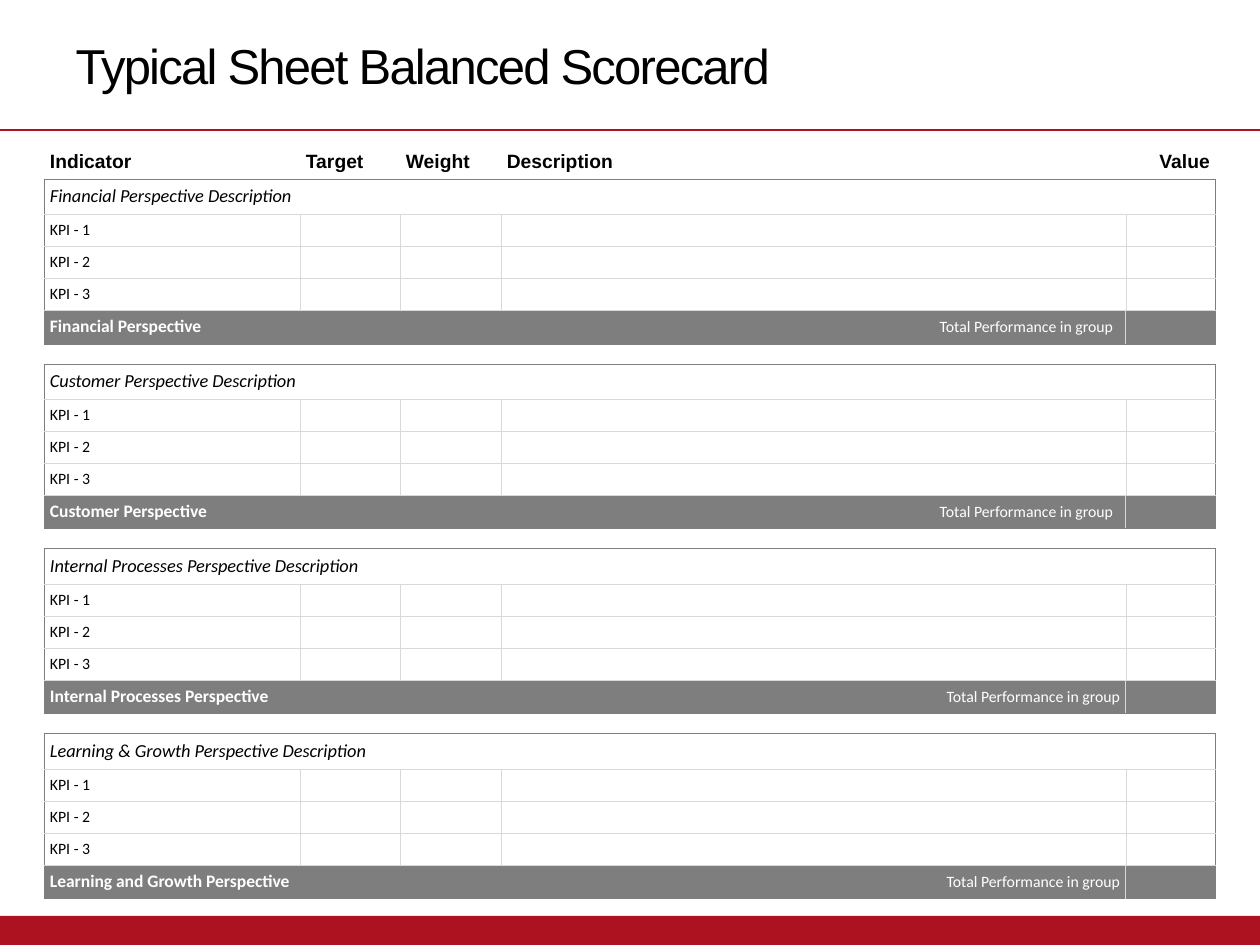
"""Build a balanced scorecard slide with four groups of indicators."""
from lxml.etree import SubElement
from pptx import Presentation
from pptx.dml.color import RGBColor
from pptx.enum.shapes import MSO_CONNECTOR, MSO_SHAPE
from pptx.enum.text import MSO_ANCHOR, MSO_AUTO_SIZE, PP_ALIGN
from pptx.oxml.ns import qn
from pptx.util import Emu, Pt

PX = 914400 // 126
RED = RGBColor(0xAD, 0x12, 0x21)
BLACK = RGBColor(0x00, 0x00, 0x00)
WHITE = RGBColor(0xFF, 0xFF, 0xFF)
GREY = RGBColor(0x7E, 0x7E, 0x7E)
PALE = RGBColor(0xD9, 0xD9, 0xD9)


def style(run, size, color=BLACK, bold=False, italic=False, face="Calibri"):
    font = run.font
    font.name, font.size, font.bold, font.italic = face, Pt(size), bold, italic
    font.color.rgb = color


def edge(cell, side, color, width):
    props = cell._tc.get_or_add_tcPr()
    line = SubElement(props, qn(f"a:ln{side}"), w=str(Pt(width)))
    fill = SubElement(line, qn("a:solidFill"))
    SubElement(fill, qn("a:srgbClr"), val=str(color))


deck = Presentation()
deck.slide_width, deck.slide_height = Emu(1260 * PX), Emu(945 * PX)
slide = deck.slides.add_slide(deck.slide_layouts[5])
shapes = slide.shapes

bar = shapes.add_shape(MSO_SHAPE.RECTANGLE, 0, 916 * PX, 1260 * PX, 29 * PX)
bar.shadow.inherit = False
bar.fill.solid()
bar.fill.fore_color.rgb = RED
bar.line.fill.background()

rule = shapes.add_connector(MSO_CONNECTOR.STRAIGHT, 0, 130 * PX, 1260 * PX, 130 * PX)
rule.line.color.rgb = RED
rule.line.width = Pt(1.5)
SubElement(rule._element.spPr, qn("a:effectLst"))

title = shapes.title
title.left, title.top = 63 * PX, 19 * PX
title.width, title.height = 918 * PX, 91 * PX
frame = title.text_frame
frame.text = "Typical Sheet Balanced Scorecard"
frame.auto_size = MSO_AUTO_SIZE.NONE
frame.vertical_anchor = MSO_ANCHOR.MIDDLE
frame.margin_top = frame.margin_bottom = 0
frame.paragraphs[0].alignment = PP_ALIGN.LEFT
run = frame.paragraphs[0].runs[0]
style(run, 28, face="Arial")
run._r.get_or_add_rPr().set("spc", "-100")

groups = [
    ("Financial Perspective Description", "Financial Perspective", 13),
    ("Customer Perspective Description", "Customer Perspective", 13),
    ("Internal Processes Perspective Description", "Internal Processes Perspective", 6),
    ("Learning & Growth Perspective Description", "Learning and Growth Perspective", 6),
]
rows = [("head", ["Indicator", "Target", "Weight", "Description", "Value"], 6)]
for intro, name, pad in groups:
    if len(rows) > 1:
        rows.append(("gap", [""] * 5, 0))
    rows.append(("intro", [intro, "", "", "", ""], 6))
    rows += [("item", [f"KPI - {n}", "", "", "", ""], 6) for n in (1, 2, 3)]
    rows.append(("total", [name, "", "", "Total Performance in group", ""], pad))

widths = [256, 100, 101, 625, 90]
heights = {"head": 35, "intro": 35, "item": 32, "total": 34, "gap": 20}
tall = sum(heights[kind] for kind, _, _ in rows)
holder = shapes.add_table(len(rows), 5, 44 * PX, 144 * PX, sum(widths) * PX, tall * PX)
table = holder.table
table.first_row = table.horz_banding = False
table._tbl.tblPr.find(qn("a:tableStyleId")).text = "{2D5ABB26-0587-4C30-8999-92F81FD0307C}"
for column, width in zip(table.columns, widths):
    column.width = width * PX

looks = {
    "head": dict(size=11, bold=True, face="Arial"),
    "intro": dict(size=10.5, italic=True),
    "item": dict(size=9),
    "total": dict(size=10, color=WHITE, bold=True),
}
for r, (kind, texts, pad) in enumerate(rows):
    table.rows[r].height = heights[kind] * PX
    if kind in ("intro", "total", "gap"):
        table.cell(r, 0).merge(table.cell(r, 1))
    for c, text in enumerate(texts):
        cell = table.cell(r, c)
        cell.vertical_anchor = MSO_ANCHOR.MIDDLE
        cell.margin_left = 6 * PX
        cell.margin_right = (pad if c == 3 else 6) * PX
        cell.margin_top = cell.margin_bottom = (0 if kind == "gap" else 6) * PX
        line = cell.text_frame.paragraphs[0]
        if text:
            line.text = text
            if kind == "total" and c == 3:
                style(line.runs[0], 9, WHITE)
            else:
                style(line.runs[0], **looks[kind])
            if c == 4 or (kind == "total" and c == 3):
                line.alignment = PP_ALIGN.RIGHT
        else:
            line._p.get_or_add_endParaRPr().set("sz", "600")

        if kind in ("intro", "item", "total"):
            if c == 0:
                edge(cell, "L", GREY, 0.5)
            elif kind == "item":
                edge(cell, "L", PALE, 0.25)
            elif kind == "total" and c == 4:
                edge(cell, "L", PALE, 0.5)
            if c == 4:
                edge(cell, "R", GREY, 0.5)
            elif kind == "item":
                edge(cell, "R", PALE, 0.25)
            elif kind == "total" and c == 3:
                edge(cell, "R", PALE, 0.5)
        if kind in ("intro", "gap"):
            edge(cell, "T", GREY, 0.5)
        elif kind != "head":
            edge(cell, "T", PALE, 0.25)
        if kind in ("intro", "item"):
            edge(cell, "B", PALE, 0.25)
        else:
            edge(cell, "B", GREY, 0.5)

        if kind == "total":
            cell.fill.solid()
            cell.fill.fore_color.rgb = GREY
        else:
            cell.fill.background()

deck.save("out.pptx")
